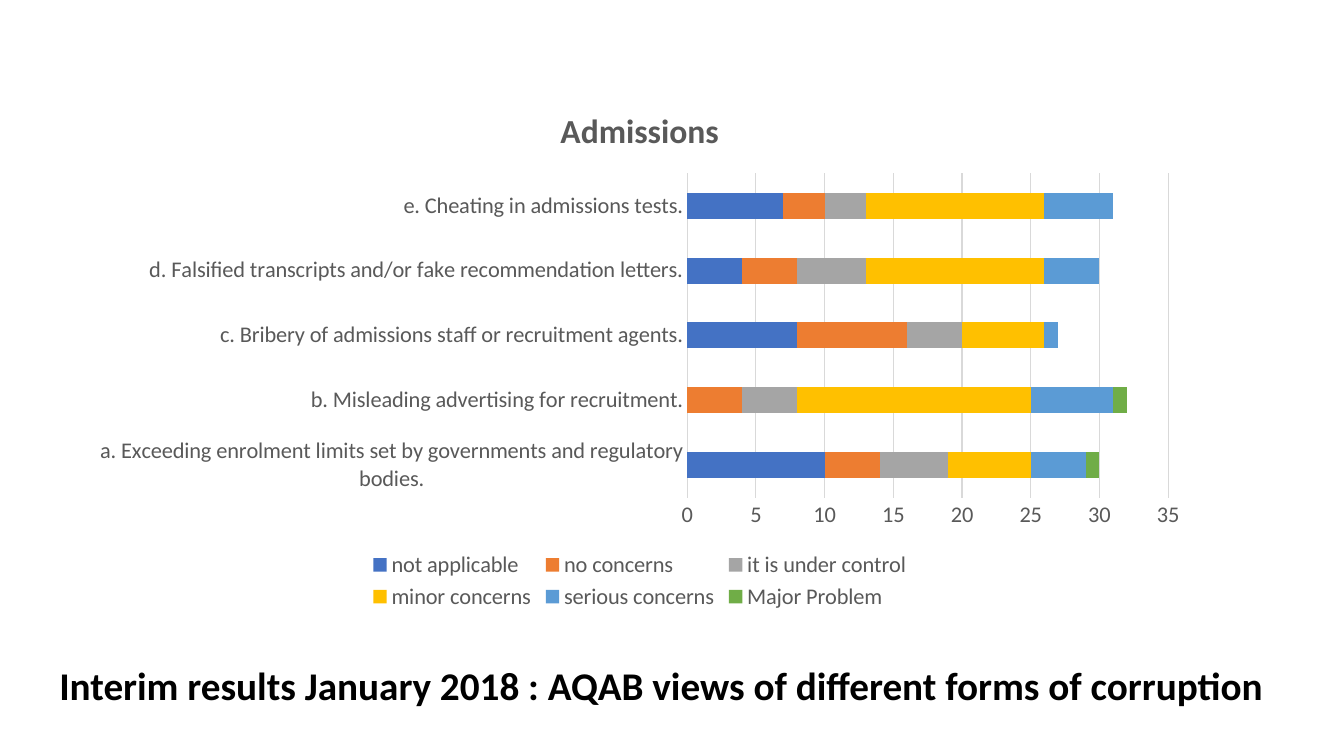
"""Build a slide with a stacked bar chart of corruption concerns in admissions."""
from pptx import Presentation
from pptx import util as u
from pptx.chart import data as chart_data
from pptx.dml.color import RGBColor
from pptx.enum import chart as charts
from pptx.enum import text

FONT = "Calibri"
COLORS = {"ink": "000000", "label": "595959", "rule": "D9D9D9"}
CAPTION = "Interim results January 2018 : AQAB views of different forms of corruption"
CAPTION_PLACE = (0.49, 6.51, 12.62, 0.57)
CHART_TITLE = "Admissions"
CHART_PLACE = (0.77, 0.85, 11.15, 5.25)
CATEGORIES = [
    "a. Exceeding enrolment limits set by governments and regulatory bodies.",
    "b. Misleading advertising for recruitment.",
    "c. Bribery of admissions staff or recruitment agents.",
    "d. Falsified transcripts and/or fake recommendation letters.",
    "e. Cheating in admissions tests.",
]
SERIES = [
    ("not applicable", (10, 0, 8, 4, 7), "4472C4"),
    ("no concerns", (4, 4, 8, 4, 3), "ED7D31"),
    ("it is under control", (5, 4, 4, 5, 3), "A5A5A5"),
    ("minor concerns", (6, 17, 6, 13, 13), "FFC000"),
    ("serious concerns", (4, 6, 1, 4, 5), "5B9BD5"),
    ("Major Problem", (1, 1, 0, 0, 0), "70AD47"),
]


def style_font(font, size, color, bold=False):
    font.name = FONT
    font.size = u.Pt(size)
    font.bold = bold
    font.color.rgb = RGBColor.from_string(COLORS[color])


def style_rule(line):
    line.color.rgb = RGBColor.from_string(COLORS["rule"])
    line.width = u.Pt(0.75)


def add_concerns_chart(page):
    table = chart_data.CategoryChartData(number_format="General")
    table.categories = CATEGORIES
    for name, values, _ in SERIES:
        table.add_series(name, values)
    place = [u.Inches(length) for length in CHART_PLACE]
    chart = page.shapes.add_chart(charts.XL_CHART_TYPE.BAR_STACKED, *place, table).chart
    style_font(chart.font, 10, "ink")

    chart.has_title = True
    span = chart.chart_title.text_frame.paragraphs[0].add_run()
    span.text = CHART_TITLE
    style_font(span.font, 24, "label", bold=True)
    chart.chart_title.include_in_layout = False

    chart.has_legend = True
    chart.legend.position = charts.XL_LEGEND_POSITION.BOTTOM
    chart.legend.include_in_layout = False
    style_font(chart.legend.font, 16, "label")

    for axis in (chart.category_axis, chart.value_axis):
        axis.major_tick_mark = axis.minor_tick_mark = charts.XL_TICK_MARK.NONE
        style_font(axis.tick_labels.font, 16, "label")
    style_rule(chart.category_axis.format.line)
    chart.value_axis.format.line.fill.background()
    chart.value_axis.has_major_gridlines = True
    style_rule(chart.value_axis.major_gridlines.format.line)

    plot = chart.plots[0]
    plot.gap_width, plot.overlap = 150, 100
    plot.vary_by_categories = False
    for bars, (_, _, color) in zip(plot.series, SERIES):
        bars.invert_if_negative = False
        bars.format.fill.solid()
        bars.format.fill.fore_color.rgb = RGBColor.from_string(color)


def add_caption(page):
    box = page.shapes.add_textbox(*[u.Inches(length) for length in CAPTION_PLACE])
    frame = box.text_frame
    frame.word_wrap = True
    frame.auto_size = text.MSO_AUTO_SIZE.SHAPE_TO_FIT_TEXT
    span = frame.paragraphs[0].add_run()
    span.text = CAPTION
    style_font(span.font, 28, "ink", bold=True)


def main():
    deck = Presentation()
    deck.slide_width, deck.slide_height = u.Inches(13.33), u.Inches(7.5)
    page = deck.slides.add_slide(deck.slide_layouts[6])
    add_caption(page)
    add_concerns_chart(page)
    deck.save("out.pptx")


if __name__ == "__main__":
    main()
